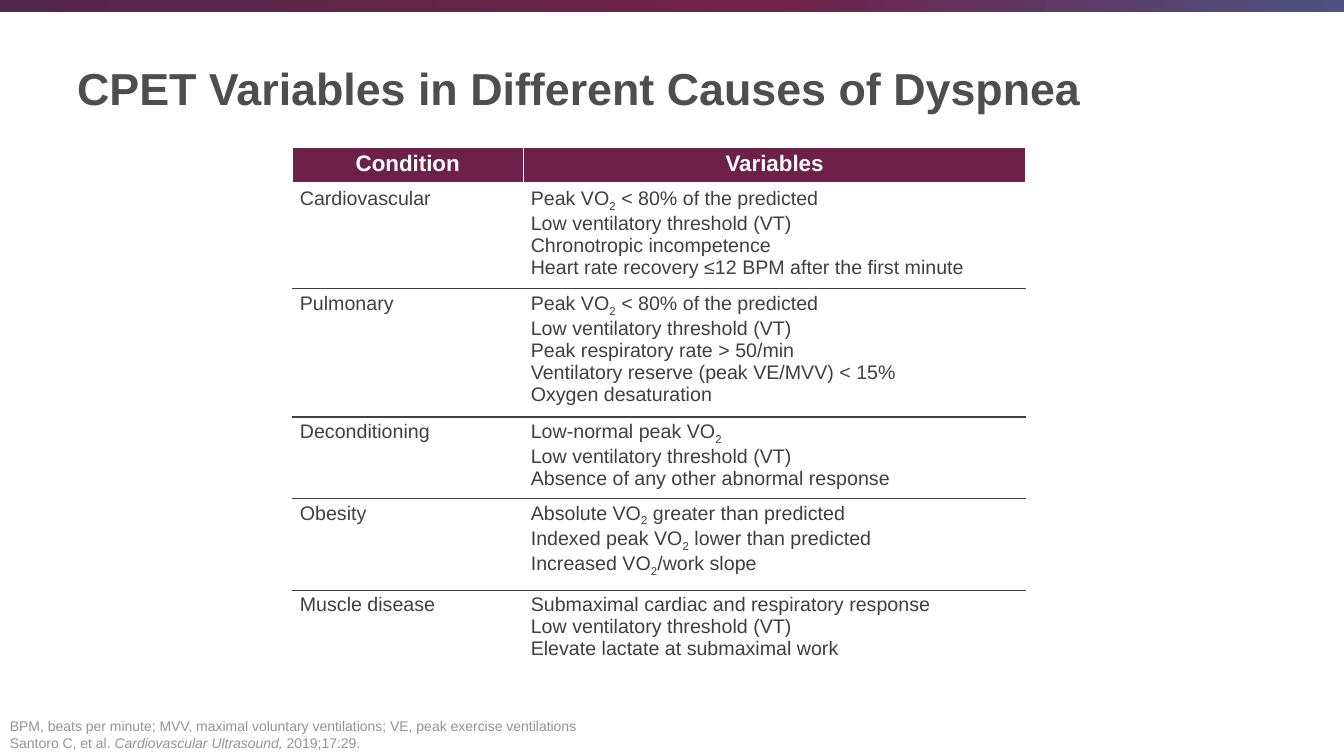
from copy import deepcopy
from dataclasses import dataclass

from lxml.etree import SubElement
from pptx import Presentation
from pptx.dml.color import RGBColor
from pptx.enum.shapes import MSO_SHAPE
from pptx.enum.text import MSO_ANCHOR, PP_ALIGN
from pptx.oxml.ns import qn
from pptx.util import Pt


@dataclass(frozen=True)
class Theme:
    font: str = "Arial"
    title: str = "4D4E4D"
    body: str = "3F3F3F"
    footnote: str = "939393"
    accent: str = "6E2148"
    white: str = "FFFFFF"
    band: tuple = ((0, "54284B"), (0.57, "6F2147"), (1, "4D5282"))
    title_size: int = 32
    header_size: int = 16
    body_size: int = 14
    footnote_size: int = 10


THRESHOLD = "Low ventilatory threshold (VT)"
PEAK = "Peak VO|2| < 80% of the predicted"
HEADINGS = ("Condition", "Variables")
CONDITIONS = {
    "Cardiovascular": [PEAK, THRESHOLD, "Chronotropic incompetence",
                       "Heart rate recovery ≤12 BPM after the first minute"],
    "Pulmonary": [PEAK, THRESHOLD, "Peak respiratory rate > 50/min",
                  "Ventilatory reserve (peak VE/MVV) < 15%", "Oxygen desaturation"],
    "Deconditioning": ["Low-normal peak VO|2", THRESHOLD,
                       "Absence of any other abnormal response"],
    "Obesity": ["Absolute VO|2| greater than predicted",
                "Indexed peak VO|2| lower than predicted",
                "Increased VO|2|/work slope"],
    "Muscle disease": ["Submaximal cardiac and respiratory response", THRESHOLD,
                       "Elevate lactate at submaximal work"],
}
FOOTNOTE = [
    "BPM, beats per minute; MVV, maximal voluntary ventilations; VE, peak exercise ventilations",
    "Santoro C, et al. |Cardiovascular Ultrasound, |2019;17:29.",
]
COLUMN_WIDTHS = (165, 359)
ROW_HEIGHTS = (25.9, 74.2, 90.7, 56.9, 65.5, 56.9)


def apply(target, values):
    for name, value in values.items():
        setattr(target, name, value)


class SlideBuilder:
    def __init__(self, slide, theme):
        self.slide = slide
        self.theme = theme

    def paragraphs(self, frame, lines, size, color, bold=False, align=PP_ALIGN.LEFT,
                   accent="baseline"):
        accents = {"baseline": "-25000", "i": "1"}
        for index, line in enumerate(lines):
            paragraph = frame.add_paragraph() if index else frame.paragraphs[0]
            paragraph.alignment = align
            for position, words in enumerate(line.split("|")):
                run = paragraph.add_run()
                run.text = words
                apply(run.font, {"name": self.theme.font, "size": Pt(size), "bold": bold})
                run.font.color.rgb = RGBColor.from_string(color)
                if position % 2:
                    run._r.get_or_add_rPr().set(accent, accents[accent])

    def text(self, box, lines, size, color, anchor, **style):
        frame = self.slide.shapes.add_textbox(*map(Pt, box)).text_frame
        apply(frame, {"word_wrap": True, "vertical_anchor": anchor})
        self.paragraphs(frame, lines, size, color, **style)

    def gradient_band(self, box, stops):
        band = self.slide.shapes.add_shape(MSO_SHAPE.RECTANGLE, *map(Pt, box))
        band.shadow.inherit = False
        band.line.fill.background()
        band.fill.gradient()
        band.fill.gradient_angle = 0
        stop_list = band._element.spPr.find(qn("a:gradFill")).find(qn("a:gsLst"))
        stop_list.append(deepcopy(stop_list[-1]))
        for stop, (position, color) in zip(band.fill.gradient_stops, stops):
            stop.position = position
            stop.color.rgb = RGBColor.from_string(color)

    def borders(self, cell, top, bottom, bottom_width=1):
        white = self.theme.white
        edges = {"L": (white, 1), "R": (white, 1), "T": (top, 1), "B": (bottom, bottom_width)}
        properties = cell._tc.get_or_add_tcPr()
        for side, (color, width) in edges.items():
            edge = SubElement(properties, qn(f"a:ln{side}"), w=str(Pt(width)))
            if color:
                SubElement(SubElement(edge, qn("a:solidFill")), qn("a:srgbClr"), val=color)
            else:
                SubElement(edge, qn("a:noFill"))

    def cell(self, cell, lines, row, last_row):
        theme = self.theme
        apply(cell, {"margin_left": Pt(5.4), "margin_right": Pt(5.4),
                     "margin_top": Pt(2.7), "margin_bottom": Pt(2.7),
                     "vertical_anchor": MSO_ANCHOR.TOP})
        if row == 0:
            self.borders(cell, theme.white, theme.white, 3)
            cell.fill.solid()
            cell.fill.fore_color.rgb = RGBColor.from_string(theme.accent)
            self.paragraphs(cell.text_frame, lines, theme.header_size, theme.white,
                            bold=True, align=PP_ALIGN.CENTER)
        else:
            top = theme.white if row == 1 else theme.body
            self.borders(cell, top, None if row == last_row else theme.body)
            cell.fill.background()
            self.paragraphs(cell.text_frame, lines, theme.body_size, theme.body)

    def table(self, left, top, widths, heights, rows):
        table = self.slide.shapes.add_table(
            len(rows), len(widths), Pt(left), Pt(top), Pt(sum(widths)), Pt(sum(heights))).table
        apply(table, {"first_row": True, "horz_banding": False})
        for column, width in zip(table.columns, widths):
            column.width = Pt(width)
        for row, height in zip(table.rows, heights):
            row.height = Pt(height)
        for row_index, row in enumerate(rows):
            for column_index, lines in enumerate(row):
                self.cell(table.cell(row_index, column_index), lines, row_index, len(rows) - 1)


def main():
    presentation = Presentation()
    apply(presentation, {"slide_width": Pt(960), "slide_height": Pt(540)})
    theme = Theme()
    builder = SlideBuilder(presentation.slides.add_slide(presentation.slide_layouts[6]), theme)
    builder.gradient_band((0, 0, 960, 8.6), theme.band)
    builder.text((48, 16, 846, 93.6), ["CPET Variables in Different Causes of Dyspnea"],
                 theme.title_size, theme.title, MSO_ANCHOR.MIDDLE, bold=True)
    rows = [[[heading] for heading in HEADINGS]]
    rows += [[[condition], variables] for condition, variables in CONDITIONS.items()]
    builder.table(208.8, 105.3, COLUMN_WIDTHS, ROW_HEIGHTS, rows)
    builder.text((0, 505.4, 846, 34.6), FOOTNOTE, theme.footnote_size, theme.footnote,
                 MSO_ANCHOR.BOTTOM, accent="i")
    presentation.save("out.pptx")


if __name__ == "__main__":
    main()
